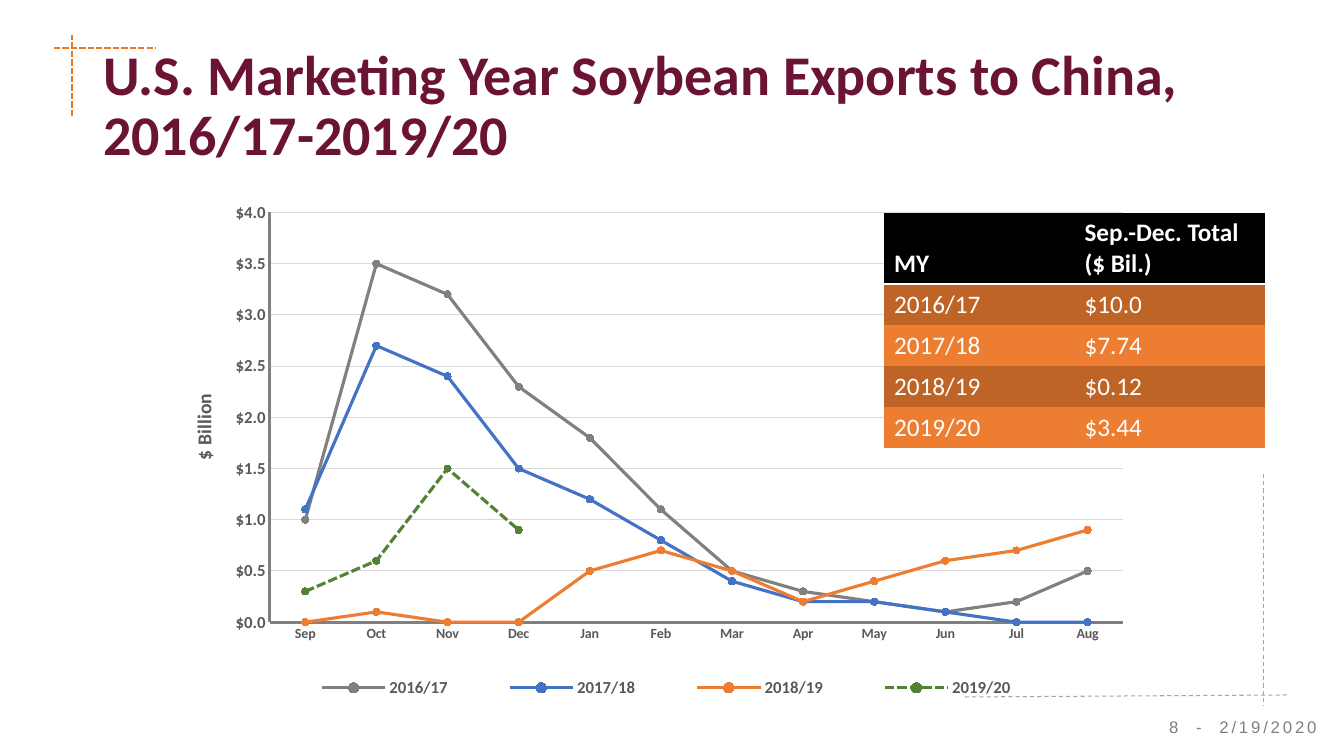
from lxml.etree import SubElement
from pptx import Presentation
from pptx.chart.data import CategoryChartData
from pptx.dml.color import RGBColor
from pptx.enum.chart import XL_CHART_TYPE, XL_LEGEND_POSITION, XL_MARKER_STYLE, XL_TICK_MARK
from pptx.enum.dml import MSO_LINE
from pptx.enum.shapes import MSO_CONNECTOR
from pptx.enum.text import MSO_ANCHOR, MSO_AUTO_SIZE, PP_ALIGN
from pptx.oxml import parse_xml
from pptx.oxml.ns import nsdecls, qn
from pptx.util import Pt

EMU_PER_PX = 914400 / 100.8
MONTHS = ["Sep", "Oct", "Nov", "Dec", "Jan", "Feb", "Mar", "Apr", "May", "Jun", "Jul", "Aug"]
EXPORTS = [
    ("2016/17", "808080", None, [1, 3.5, 3.2, 2.3, 1.8, 1.1, 0.5, 0.3, 0.2, 0.1, 0.2, 0.5]),
    ("2017/18", "4472C4", None, [1.1, 2.7, 2.4, 1.5, 1.2, 0.8, 0.4, 0.2, 0.2, 0.1, 0, 0]),
    ("2018/19", "ED7D31", None, [0, 0.1, 0, 0, 0.5, 0.7, 0.5, 0.2, 0.4, 0.6, 0.7, 0.9]),
    ("2019/20", "548235", MSO_LINE.SQUARE_DOT, [0.3, 0.6, 1.5, 0.9] + [None] * 8),
]
TOTALS = [
    ("MY", "Sep.-Dec. Total\n($ Bil.)"),
    ("2016/17", "$10.0"),
    ("2017/18", "$7.74"),
    ("2018/19", "$0.12"),
    ("2019/20", "$3.44"),
]


def px(length):
    return round(length * EMU_PER_PX)


def color(hex_code):
    return RGBColor.from_string(hex_code)


def style_font(font, size, hex_code, bold=False, name="Calibri"):
    font.name = name
    font.size = Pt(size)
    font.bold = bold
    font.color.rgb = color(hex_code)


def style_line(line, hex_code, width, dash=None):
    line.color.rgb = color(hex_code)
    line.width = Pt(width)
    if dash is not None:
        line.dash_style = dash


def set_layout(parent, previous_tag, **fractions):
    for old in parent.findall(qn("c:layout")):
        parent.remove(old)
    layout = parse_xml(f"<c:layout {nsdecls('c')}><c:manualLayout/></c:layout>")
    for tag, value in fractions.items():
        SubElement(layout[0], qn(f"c:{tag}")).set("val", str(value))
    if previous_tag:
        parent.find(qn(previous_tag)).addnext(layout)
    else:
        parent.insert(0, layout)


def add_corner_rules(slide):
    orange = ("E87822", 1.5, MSO_LINE.SQUARE_DOT)
    gray = ("A5A5A5", 0.75, MSO_LINE.DASH)
    for ends, look in [
        ((54, 48, 155, 48), orange),
        ((72, 116, 72, 35), orange),
        ((1264, 474, 1264, 706), gray),
        ((965, 697, 1287, 695), gray),
    ]:
        rule = slide.shapes.add_connector(MSO_CONNECTOR.STRAIGHT, *map(px, ends))
        style_line(rule.line, *look)
        SubElement(rule._element.spPr, qn("a:effectLst"))


def add_title(slide, left, top, width, height):
    title = slide.shapes.title
    title.left, title.top, title.width, title.height = map(px, (left, top, width, height))
    frame = title.text_frame
    frame.text = "U.S. Marketing Year Soybean Exports to China, 2016/17-2019/20"
    frame.word_wrap = True
    frame.auto_size = MSO_AUTO_SIZE.NONE
    frame.vertical_anchor = MSO_ANCHOR.MIDDLE
    heading = frame.paragraphs[0]
    heading.alignment = PP_ALIGN.LEFT
    heading.line_spacing = 0.9
    style_font(heading.runs[0].font, 40, "6B1335", True)


def add_footer(slide, left, top, width, height):
    footer = slide.shapes.add_textbox(*map(px, (left, top, width, height)))
    frame = footer.text_frame
    frame.text = "8  -  2/19/2020"
    frame.word_wrap = True
    frame.vertical_anchor = MSO_ANCHOR.MIDDLE
    page_and_date = frame.paragraphs[0]
    page_and_date.alignment = PP_ALIGN.CENTER
    page_and_date.line_spacing = 0.9
    page_and_date.space_before = Pt(10)
    font = page_and_date.runs[0].font
    style_font(font, 12, "808080", name="Arial")
    font._element.set("spc", "200")


def add_export_chart(slide, left, top, width, height):
    export_data = CategoryChartData(number_format='"$"#,##0.0')
    export_data.categories = MONTHS
    for year, _, _, values in EXPORTS:
        export_data.add_series(year, values)
    chart = slide.shapes.add_chart(
        XL_CHART_TYPE.LINE_MARKERS, *map(px, (left, top, width, height)), export_data
    ).chart
    style_font(chart.font, 10, "000000")
    chart.has_title = False

    for series, (_, hue, dash, _) in zip(chart.plots[0].series, EXPORTS):
        series.smooth = False
        style_line(series.format.line, hue, 2.25, dash)
        series.marker.style = XL_MARKER_STYLE.CIRCLE
        series.marker.size = 5
        series.marker.format.fill.solid()
        series.marker.format.fill.fore_color.rgb = color(hue)
        style_line(series.marker.format.line, hue, 0.75)
    chart.plots[0].vary_by_categories = False

    months, dollars = chart.category_axis, chart.value_axis
    for axis, size in [(months, 10), (dollars, 12)]:
        axis.major_tick_mark = axis.minor_tick_mark = XL_TICK_MARK.NONE
        style_font(axis.tick_labels.font, size, "595959", True)
        style_line(axis.format.line, "808080", 2)
    months.has_major_gridlines = False
    dollars.minimum_scale, dollars.maximum_scale, dollars.major_unit = 0, 4, 0.5
    dollars.tick_labels.number_format = '"$"#,##0.0'
    dollars.tick_labels.number_format_is_linked = False
    style_line(dollars.major_gridlines.format.line, "D9D9D9", 0.75)
    unit = dollars.axis_title
    unit.text_frame.text = "$ Billion"
    style_font(unit.text_frame.paragraphs[0].runs[0].font, 14, "595959", True)
    set_layout(unit._element, "c:tx", xMode="edge", yMode="edge", x=0.03, y=0.4)

    chart.has_legend = True
    chart.legend.position = XL_LEGEND_POSITION.BOTTOM
    chart.legend.include_in_layout = False
    style_font(chart.legend.font, 12, "595959", True)
    set_layout(chart.legend._element, "c:legendPos",
               xMode="edge", yMode="edge", x=0.11, y=0.92, w=0.81, h=0.06)
    plot_area = chart._chartSpace.chart.plotArea
    set_layout(plot_area, None, layoutTarget="inner", xMode="edge", yMode="edge",
               x=0.114, y=0.073, w=0.863, h=0.756)


def add_totals_table(slide, left, top, width, header_height, row_height):
    height = header_height + row_height * (len(TOTALS) - 1)
    table = slide.shapes.add_table(
        len(TOTALS), 2, *map(px, (left, top, width, height))
    ).table
    for column in table.columns:
        column.width = px(width / 2)
    for index, entries in enumerate(TOTALS):
        is_header = index == 0
        table.rows[index].height = px(header_height if is_header else row_height)
        shade = "000000" if is_header else ("ED7D31", "BE6427")[index % 2]
        for cell, entry in zip(table.rows[index].cells, entries):
            cell.text_frame.text = entry
            for paragraph in cell.text_frame.paragraphs:
                style_font(paragraph.runs[0].font, 18, "FFFFFF", is_header)
            cell.vertical_anchor = MSO_ANCHOR.BOTTOM if is_header else MSO_ANCHOR.TOP
            properties = cell._tc.get_or_add_tcPr()
            for side in ("lnL", "lnR", "lnT", "lnB"):
                border = SubElement(properties, qn(f"a:{side}"))
                if is_header and side == "lnB":
                    border.set("w", str(Pt(2)))
                    paint = SubElement(border, qn("a:solidFill"))
                    SubElement(paint, qn("a:srgbClr")).set("val", "FFFFFF")
                else:
                    SubElement(border, qn("a:noFill"))
            cell.fill.solid()
            cell.fill.fore_color.rgb = color(shade)


def main():
    deck = Presentation()
    deck.slide_width, deck.slide_height = px(1344), px(756)
    slide = deck.slides.add_slide(deck.slide_layouts[5])
    add_footer(slide, 1142, 713, 202, 30)
    add_corner_rules(slide)
    add_title(slide, 93, 52, 1159, 111)
    add_export_chart(slide, 157, 173, 989, 542)
    add_totals_table(slide, 884, 213, 381, 71, 41)
    deck.save("out.pptx")


if __name__ == "__main__":
    main()
